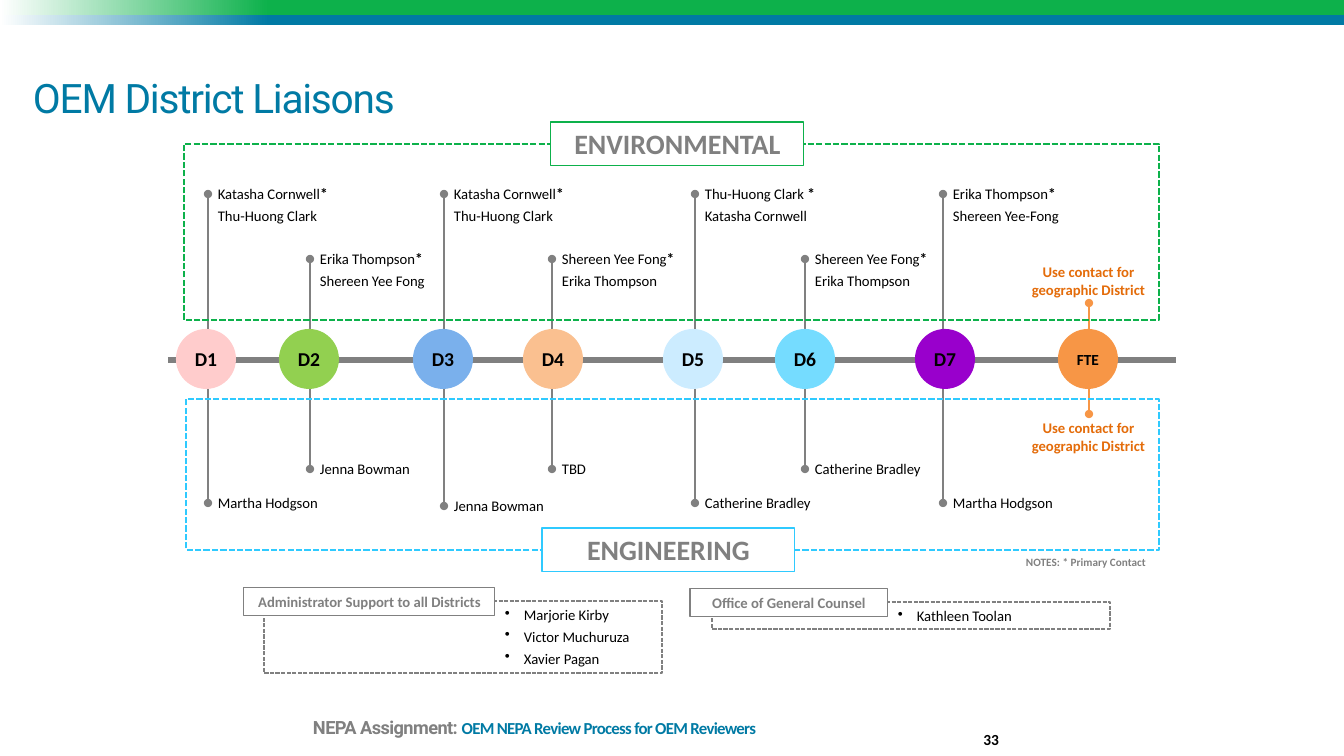
import pptx
import pptx.util
import pptx.dml.color
import pptx.enum.dml
import pptx.enum.shapes
import pptx.enum.text
import pptx.oxml.ns
import lxml.etree

RGBColor = pptx.dml.color.RGBColor
Pt = pptx.util.Pt
Shape = pptx.enum.shapes.MSO_SHAPE
Align = pptx.enum.text.PP_ALIGN
Anchor = pptx.enum.text.MSO_ANCHOR
qn = pptx.oxml.ns.qn
PX = 914400 / 100.8

WHITE = RGBColor(0xFF, 0xFF, 0xFF)
BLACK = RGBColor(0, 0, 0)
GRAY = RGBColor(0x80, 0x80, 0x80)
GREEN = RGBColor(0x0D, 0xB1, 0x4B)
BLUE = RGBColor(0x00, 0x7A, 0xA4)
SKY = RGBColor(0x2F, 0xCA, 0xFF)
ORANGE = RGBColor(0xF7, 0x96, 0x46)
RUST = RGBColor(0xE4, 0x6C, 0x0A)
PINK = RGBColor(0xFF, 0xCC, 0xCC)
LIME = RGBColor(0x92, 0xD0, 0x50)
DENIM = RGBColor(0x7A, 0xB0, 0xEC)
PEACH = RGBColor(0xFA, 0xC0, 0x90)
ICE = RGBColor(0xCC, 0xEC, 0xFF)
AQUA = RGBColor(0x75, 0xDC, 0xFF)
PURPLE = RGBColor(0x99, 0x00, 0xCC)

deck = pptx.Presentation()
deck.slide_width, deck.slide_height = round(1344 * PX), round(756 * PX)
slide = deck.slides.add_slide(deck.slide_layouts[6])
shapes = slide.shapes


def place(box, kind=None, fill=None, line=None, width=0.75, dash=False, inset=True, anchor=Anchor.TOP):
    """Add a preset shape, or a text box when kind is None."""
    size = [round(n * PX) for n in box]
    if kind is None:
        item = shapes.add_textbox(*size)
    else:
        item = shapes.add_shape(kind, *size)
        item.shadow.inherit = False
        if fill is None:
            item.fill.background()
        else:
            item.fill.solid()
            item.fill.fore_color.rgb = fill
        if line is None:
            item.line.fill.background()
        else:
            item.line.color.rgb = line
            item.line.width = Pt(width)
            if dash:
                item.line.dash_style = pptx.enum.dml.MSO_LINE.SQUARE_DOT
    frame = item.text_frame
    frame.word_wrap = True
    frame.vertical_anchor = anchor
    if not inset:
        frame.margin_left = frame.margin_right = frame.margin_top = frame.margin_bottom = 0
    return item


def write(item, text, size=10.5, color=BLACK, bold=False, font="Calibri", track=0,
          align=Align.LEFT, after=0, lead=None, bullet=False, join=False):
    """Add text as a new paragraph, or to the last one when join is set."""
    frame = item.text_frame
    para = frame.paragraphs[-1]
    if not join:
        if para.runs:
            para = frame.add_paragraph()
        if bullet:
            props = para._p.get_or_add_pPr()
            props.set("marL", str(round(19 * PX)))
            props.set("indent", str(round(-19 * PX)))
            lxml.etree.SubElement(props, qn("a:buChar")).set("char", "•")
        para.alignment = align
        para.space_after = Pt(after)
        if lead:
            para.line_spacing = lead
    run = para.add_run()
    run.text = text
    run.font.name = font
    run.font.size = Pt(size)
    run.font.bold = bold
    run.font.color.rgb = color
    if track:
        run._r.get_or_add_rPr().set("spc", str(round(track * 100)))


# Top bands
for top, high, tint in [(0, 15, GREEN), (15, 10, BLUE)]:
    band = place((0, top, 1344, high), Shape.RECTANGLE, WHITE)
    band.fill.gradient()
    band.fill.gradient_angle = 0
    for stop, spot, shade in zip(band.fill.gradient_stops, (0, 0.2), (WHITE, tint)):
        stop.position = spot
        stop.color.rgb = shade

# Title, footer and page number
title = place((33, 30, 1210, 91), inset=False, anchor=Anchor.BOTTOM)
write(title, "OEM District Liaisons", size=29, color=BLUE, font="Roboto", track=-0.9, lead=0.8)
foot = place((313, 691, 727, 47), inset=False, anchor=Anchor.BOTTOM)
write(foot, "NEPA Assignment: ", size=13, color=GRAY, bold=True, font="Roboto",
      track=-0.4, after=12, lead=0.8)
write(foot, "OEM NEPA Review Process for OEM Reviewers", size=12, color=BLUE, bold=True,
      track=-0.5, join=True)
page = place((940, 709, 59, 40), inset=False, anchor=Anchor.BOTTOM)
write(page, "33", size=11, bold=True, align=Align.RIGHT)

# Name, fill, circle left, stem x, stem top, stem bottom, primary, backup, engineer
MARK = 1058, 1089, 303, 414
liaisons = [
    ("D1", PINK, 176, 208, 194, 503, "Katasha Cornwell", "Thu-Huong Clark", "Martha Hodgson"),
    ("D2", LIME, 279, 310, 259, 469, "Erika Thompson", "Shereen Yee Fong", "Jenna Bowman"),
    ("D3", DENIM, 413, 444, 194, 506, "Katasha Cornwell", "Thu-Huong Clark", "Jenna Bowman"),
    ("D4", PEACH, 523, 552, 259, 469, "Shereen Yee Fong", "Erika Thompson", "TBD"),
    ("D5", ICE, 663, 695, 194, 503, "Thu-Huong Clark ", "Katasha Cornwell", "Catherine Bradley"),
    ("D6", AQUA, 775, 805, 259, 469, "Shereen Yee Fong", "Erika Thompson", "Catherine Bradley"),
    ("D7", PURPLE, 915, 943, 194, 503, "Erika Thompson", "Shereen Yee-Fong", "Martha Hodgson"),
]

# Stems and timeline
lines = [(x, low, x, top, GRAY, 0.79) for _, _, _, x, top, low, *_ in liaisons]
lines.append((MARK[1], MARK[3], MARK[1], MARK[2], ORANGE, 0.79))
lines.append((168, 360, 1176, 360, GRAY, 4.5))
for *ends, tint, width in lines:
    stem = shapes.add_connector(pptx.enum.shapes.MSO_CONNECTOR.STRAIGHT,
                                *[round(n * PX) for n in ends])
    stem.line.color.rgb = tint
    stem.line.width = Pt(width)
    if width < 1:
        for end in ("a:headEnd", "a:tailEnd"):
            lxml.etree.SubElement(stem.line._ln, qn(end)).set("type", "oval")
    lxml.etree.SubElement(stem._element.spPr, qn("a:effectLst"))

# Dashed zones with their headings
zones = [
    ("ENVIRONMENTAL", GREEN, (184, 144, 975, 176), (551, 122, 253, 44)),
    ("ENGINEERING", SKY, (186, 399, 973, 151), (542, 528, 253, 44)),
]
for name, tint, area, head in zones:
    place(area, Shape.RECTANGLE, line=tint, width=1.5, dash=True)
    label = place(head, Shape.RECTANGLE, WHITE, tint)
    write(label, name, size=20, color=GRAY, bold=True, align=Align.CENTER)

# District circles
circles = [(name, tint, left, 14) for name, tint, left, *_ in liaisons]
circles.append(("FTE", ORANGE, MARK[0], 11))
for name, tint, left, size in circles:
    disc = place((left, 329, 60, 60), Shape.OVAL, tint, anchor=Anchor.MIDDLE)
    write(disc, name, size=size, bold=True, align=Align.CENTER)

# Contacts beside the stem ends
for _, _, _, x, top, low, main, backup, expert in liaisons:
    staff = place((x, top - 15, 151, 50))
    write(staff, main, after=3)
    write(staff, "*", size=11, bold=True, join=True)
    write(staff, backup, after=3)
    write(place((x, low - 14, 151, 28)), expert, after=3)
for top in (258, 414):
    hint = place((1013, top, 151, 45))
    write(hint, "Use contact for geographic District", color=RUST, bold=True,
          align=Align.CENTER, after=3)
write(place((1016, 550, 143, 24)), "NOTES: * Primary Contact", size=8, color=GRAY, bold=True)

# Support panels
panels = [
    ("Administrator Support to all Districts", (264, 601, 398, 72), (244, 588, 251, 28),
     (495, 601, 168, 72), ["Marjorie Kirby", "Victor Muchuruza", "Xavier Pagan"]),
    ("Office of General Counsel", (712, 602, 398, 27), (690, 589, 198, 28),
     (888, 602, 222, 28), ["Kathleen Toolan"]),
]
for name, area, head, body, people in panels:
    place(area, Shape.RECTANGLE, line=GRAY, width=1, dash=True)
    roster = place(body)
    for person in people:
        write(roster, person, after=3, bullet=True)
    label = place(head, Shape.RECTANGLE, WHITE, GRAY)
    write(label, name, color=GRAY, bold=True, align=Align.CENTER, after=6)

deck.save("out.pptx")
